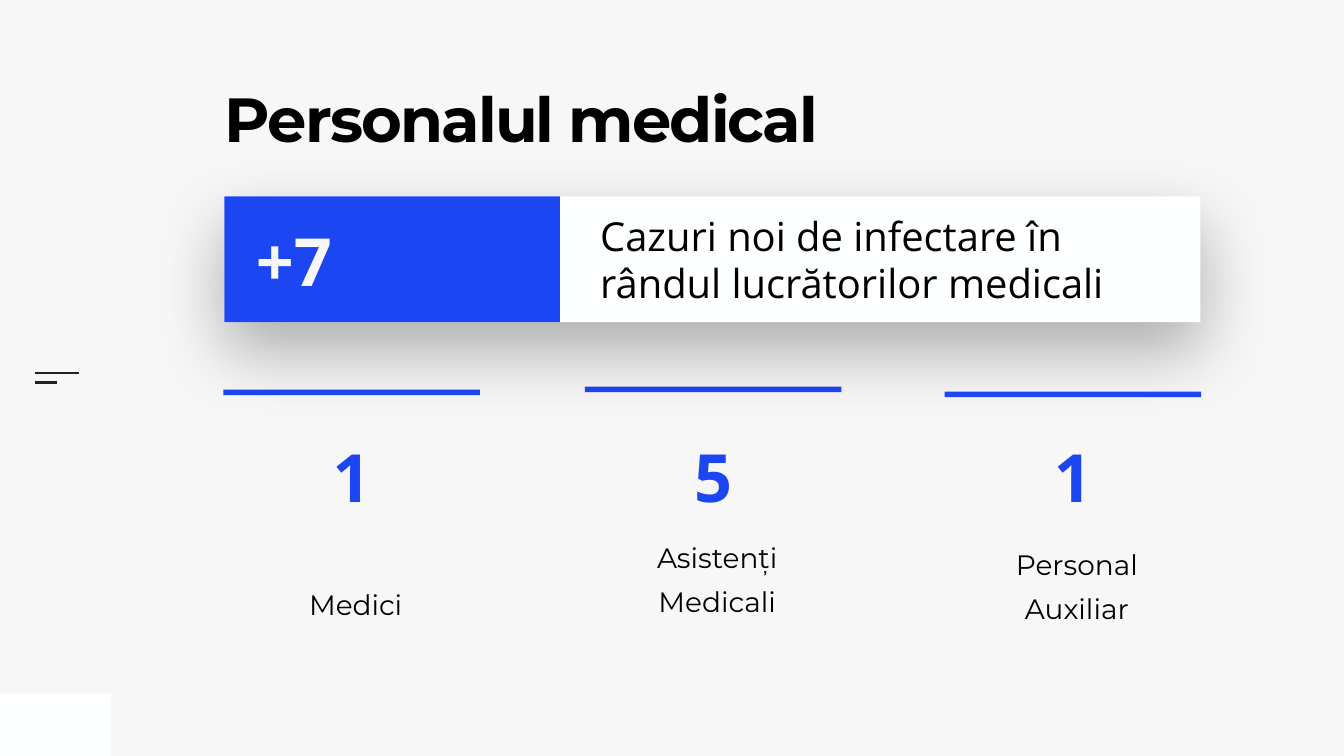
from dataclasses import dataclass

from lxml.etree import SubElement
from pptx import Presentation
from pptx.dml.color import RGBColor
from pptx.enum.shapes import MSO_CONNECTOR as Connector, MSO_SHAPE as Shape
from pptx.enum.text import MSO_ANCHOR as Anchor, PP_ALIGN as Align
from pptx.oxml.ns import qn
from pptx.shapes.autoshape import Shape as AutoShape
from pptx.slide import Slide
from pptx.util import Pt

BLUE, BLACK, WHITE, PAPER, INK = "1D46F3", "000000", "FEFFFF", "F7F7F7", "222222"
HEADING_FONT, BODY_FONT = "Montserrat", "Open Sans"


@dataclass(frozen=True)
class Box:
    left: float
    top: float
    width: float
    height: float


@dataclass(frozen=True)
class Style:
    size: float
    font: str
    color: str
    bold: bool = False
    align: Align = Align.LEFT
    anchor: Anchor = Anchor.MIDDLE
    insets: tuple[float, float, float, float] = (7.2, 7.2, 7.2, 7.2)
    line_spacing: float = 1.0
    space_before: float = 0
    tracking: float = 0


@dataclass(frozen=True)
class StaffGroup:
    count: str
    role: str
    left: float
    card_top: float
    bar_top: float


TITLE = Style(89, HEADING_FONT, BLACK, True, anchor=Anchor.TOP,
              insets=(0, 0, 0, 0), line_spacing=0.8, tracking=-2.7)
TOTAL = Style(95, BODY_FONT, PAPER, True)
SUMMARY = Style(57, BODY_FONT, BLACK)
COUNT = Style(95, BODY_FONT, BLUE, True, Align.CENTER)
ROLE = Style(40, HEADING_FONT, BLACK, align=Align.CENTER, anchor=Anchor.BOTTOM,
             insets=(39.6, 51.1, 28.1, 62.6), line_spacing=1.3, space_before=20)

STAFF_GROUPS = [
    StaffGroup("1", "Medici", 319, 556.6, 556.6),
    StaffGroup("5", "Asistenți Medicali", 835.5, 552.2, 552.2),
    StaffGroup("1", "Personal Auxiliar", 1349.3, 562.3, 559.4),
]
GROUP_WIDTH, CARD_HEIGHT, BAR_HEIGHT = 366.5, 393.1, 7.9
COUNT_TOP, COUNT_HEIGHT = 614.9, 129.6


def rgb(color: str) -> RGBColor:
    return RGBColor.from_string(color)


def write(target: AutoShape, text: str, style: Style) -> None:
    frame = target.text_frame
    frame.text = text
    frame.word_wrap = True
    frame.vertical_anchor = style.anchor
    (frame.margin_left, frame.margin_top,
     frame.margin_right, frame.margin_bottom) = map(Pt, style.insets)
    paragraph = frame.paragraphs[0]
    paragraph.alignment = style.align
    paragraph.line_spacing = style.line_spacing
    paragraph.space_before = Pt(style.space_before)
    font = paragraph.runs[0].font
    font.size, font.name, font.bold = Pt(style.size), style.font, style.bold
    font.color.rgb = rgb(style.color)
    if style.tracking:
        paragraph.runs[0]._r.get_or_add_rPr().set("spc", str(round(style.tracking * 100)))


def add_text(slide: Slide, box: Box, text: str, style: Style) -> None:
    label = slide.shapes.add_textbox(Pt(box.left), Pt(box.top), Pt(box.width), Pt(box.height))
    write(label, text, style)


def add_block(slide: Slide, box: Box, color: str) -> AutoShape:
    block = slide.shapes.add_shape(
        Shape.RECTANGLE, Pt(box.left), Pt(box.top), Pt(box.width), Pt(box.height))
    block.shadow.inherit = False
    block.fill.solid()
    block.fill.fore_color.rgb = rgb(color)
    block.line.fill.background()
    return block


def add_soft_shadow(block: AutoShape, blur: float, distance: float, opacity: int) -> None:
    effects = block._element.spPr.find(qn("a:effectLst"))
    shadow = SubElement(effects, qn("a:outerShdw"), blurRad=str(Pt(blur)),
                        dist=str(Pt(distance)), dir=str(90 * 60000), rotWithShape="0")
    tint = SubElement(shadow, qn("a:srgbClr"), val=BLACK)
    SubElement(tint, qn("a:alpha"), val=str(opacity * 1000))


def add_menu_line(slide: Slide, left: float, top: float, length: float) -> None:
    stroke = slide.shapes.add_connector(
        Connector.STRAIGHT, Pt(left), Pt(top), Pt(left + length), Pt(top))
    stroke.line.color.rgb = rgb(INK)
    stroke.line.width = Pt(3)
    SubElement(stroke._element.spPr, qn("a:effectLst"))


def add_bar(slide: Slide, group: StaffGroup) -> None:
    add_block(slide, Box(group.left, group.bar_top, GROUP_WIDTH, BAR_HEIGHT), BLUE)


def add_banner(slide: Slide) -> None:
    panel = add_block(slide, Box(320.4, 280.4, 1394.6, 180), WHITE)
    add_soft_shadow(panel, blur=100, distance=40, opacity=30)
    add_text(slide, Box(850.3, 293.8, 846.7, 152.6),
             "Cazuri noi de infectare în rândul lucrătorilor medicali", SUMMARY)
    add_block(slide, Box(320.4, 280.4, 479.5, 180), BLUE)
    add_text(slide, Box(358.6, 306, 434.2, 129.6), "+7", TOTAL)


def main() -> None:
    deck = Presentation()
    deck.slide_width, deck.slide_height = Pt(1920), Pt(1080)
    slide = deck.slides.add_slide(deck.slide_layouts[6])
    slide.background.fill.solid()
    slide.background.fill.fore_color.rgb = rgb(PAPER)

    add_block(slide, Box(0, 991, 158.4, 89), WHITE)
    add_menu_line(slide, 49.7, 533.5, 63.4)
    add_menu_line(slide, 49.7, 546.5, 31.7)

    for group in STAFF_GROUPS:
        card = add_block(slide, Box(group.left, group.card_top, GROUP_WIDTH, CARD_HEIGHT), PAPER)
        write(card, group.role, ROLE)
    *covered_groups, last_group = STAFF_GROUPS
    for group in covered_groups:
        add_bar(slide, group)

    add_text(slide, Box(321.1, 134.6, 936.7, 196.6), "Personalul medical", TITLE)
    add_banner(slide)
    add_bar(slide, last_group)
    for group in STAFF_GROUPS:
        add_text(slide, Box(group.left, COUNT_TOP, GROUP_WIDTH, COUNT_HEIGHT), group.count, COUNT)

    deck.save("out.pptx")


if __name__ == "__main__":
    main()
